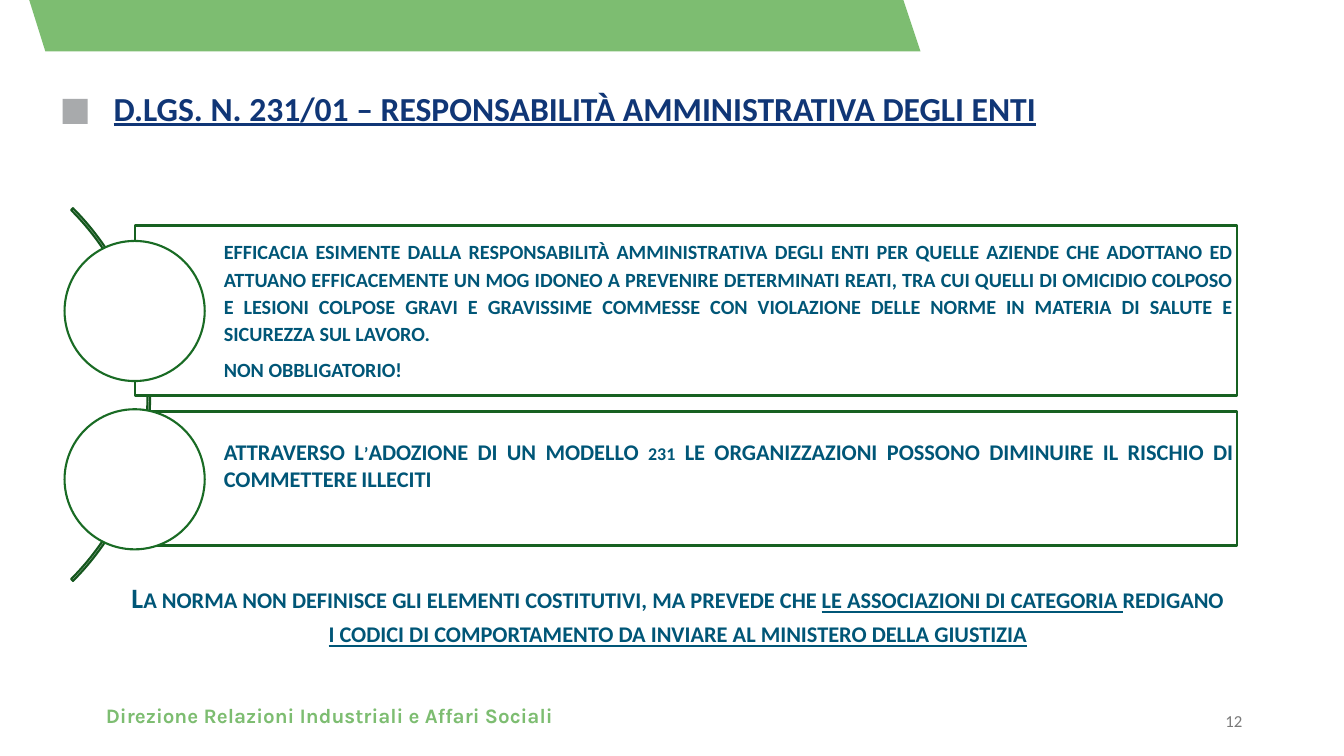
import pptx
import pptx.dml.color
import pptx.enum.shapes
import pptx.enum.text
import pptx.oxml.ns
import pptx.util
from lxml import etree
from pptx.util import Inches

SHAPE = pptx.enum.shapes.MSO_SHAPE
ALIGN = pptx.enum.text.PP_ALIGN
ANCHOR = pptx.enum.text.MSO_ANCHOR

TEAL = "005677"
NAVY = "103676"
LIGHT_GREEN = "7DBD71"
FRAME_GREEN = "176121"
CIRCLE_GREEN = "196B24"
ARC_GREEN = "14561D"
WHITE = "FFFFFF"

EXEMPTION = (
    "efficacia esimente dalla responsabilità amministrativa degli enti per quelle "
    "aziende che adottano ed attuano efficacemente un mog idoneo a prevenire "
    "determinati reati, tra cui quelli di omicidio colposo e lesioni colpose gravi e "
    "gravissime commesse con violazione delle norme in materia di salute e sicurezza "
    "sul lavoro. "
)
MODEL = (
    "ATTRAVERSO L’ADOZIONE DI UN MODELLO 231 LE ORGANIZZAZIONI POSSONO "
    "DIMINUIRE IL RISCHIO DI COMMETTERE ILLECITI"
)


def color(hex_value):
    return pptx.dml.color.RGBColor.from_string(hex_value)


def style_shape(shape, fill=None, line=None, width=1.5):
    shape.shadow.inherit = False
    if fill:
        shape.fill.solid()
        shape.fill.fore_color.rgb = color(fill)
    else:
        shape.fill.background()
    if line:
        shape.line.color.rgb = color(line)
        shape.line.width = pptx.util.Pt(width)
    else:
        shape.line.fill.background()


def add_shape(slide, kind, place, **style):
    shape = slide.shapes.add_shape(kind, *map(Inches, place))
    style_shape(shape, **style)
    return shape


def add_banner(slide):
    builder = slide.shapes.build_freeform(Inches(0.29), 0)
    corners = [(0.45, 0.51), (9.13, 0.51), (8.96, 0)]
    builder.add_line_segments([(Inches(x), Inches(y)) for x, y in corners])
    style_shape(builder.convert_to_shape(), fill=LIGHT_GREEN)


def add_title_marker(slide):
    marker = add_shape(slide, SHAPE.RECTANGLE, (0.62, 0.98, 0.25, 0.25), fill="939598")
    qn = pptx.oxml.ns.qn
    rgb = marker.fill._xPr.find(".//" + qn("a:srgbClr"))
    etree.SubElement(rgb, qn("a:alpha")).set("val", "80000")


def set_frame(box, insets=(0.1, 0.05, 0.1, 0.05), anchor=ANCHOR.TOP):
    """Set wrapping, anchor and the left, top, right and bottom insets."""
    frame = box.text_frame
    frame.word_wrap = True
    frame.vertical_anchor = anchor
    (frame.margin_left, frame.margin_top,
     frame.margin_right, frame.margin_bottom) = map(Inches, insets)
    return frame


def add_text_box(slide, place, **frame_style):
    return set_frame(slide.shapes.add_textbox(*map(Inches, place)), **frame_style)


def format_para(para, align=ALIGN.LEFT, line=1.0, before=0, after=0):
    para.alignment = align
    para.line_spacing = line
    para.space_before = pptx.util.Pt(before)
    para.space_after = pptx.util.Pt(after)


def add_span(para, text, size, hex_color, font="Calibri", bold=True,
             underline=False, small_caps=False):
    span = para.add_run()
    span.text = text
    span.font.size = pptx.util.Pt(size)
    span.font.name = font
    span.font.bold = bold
    span.font.underline = underline
    span.font.color.rgb = color(hex_color)
    if small_caps:
        span.font._element.set("cap", "small")


def add_statement(slide, place, circle_top, texts, size, insets, line, after):
    """Draw a framed statement with a circle over its left edge."""
    panel = add_shape(slide, SHAPE.RECTANGLE, place,
                      fill=WHITE, line=FRAME_GREEN, width=2)
    frame = set_frame(panel, insets, ANCHOR.MIDDLE)
    for index, text in enumerate(texts):
        para = frame.add_paragraph() if index else frame.paragraphs[0]
        format_para(para, ALIGN.JUSTIFY, line, after=after)
        add_span(para, text, size, TEAL, small_caps=True)
    add_shape(slide, SHAPE.OVAL, (0.64, circle_top, 1.39, 1.39),
              fill=WHITE, line=CIRCLE_GREEN)


def add_arc(slide):
    arc = add_shape(slide, SHAPE.BLOCK_ARC, (-3.74, 1.3, 5.23, 5.23), line=ARC_GREEN)
    for index, value in enumerate((189, 27, 0.005)):
        arc.adjustments[index] = value


def add_title(slide):
    para = add_text_box(slide, (1.03, 0.86, 11.27, 0.47),
                        anchor=ANCHOR.MIDDLE).paragraphs[0]
    format_para(para, line=0.9)
    add_span(para, "D.LGS. N. 231/01 – RESPONSABILITÀ AMMINISTRATIVA DEGLI ENTI",
             24, NAVY, underline=True)


def add_conclusion(slide):
    para = add_text_box(slide, (1.16, 5.71, 11.12, 0.77)).paragraphs[0]
    format_para(para, ALIGN.CENTER, before=1.3)
    spans = [
        ("La norma non definisce gli elementi costitutivi, ma prevede che ", False),
        ("le associazioni di categoria ", True),
        ("redigano ", False),
        ("i codici di comportamento da inviare al ministero della giustizia", True),
    ]
    for text, underline in spans:
        add_span(para, text, 20, TEAL, underline=underline, small_caps=True)


def add_footer(slide):
    para = add_text_box(slide, (1.03, 6.71, 5.87, 0.5),
                        insets=(0.02, 0.28, 0, 0)).paragraphs[0]
    format_para(para)
    add_span(para, "Direzione Relazioni Industriali e Affari Sociali",
             14.7, LIGHT_GREEN, font="Karla")
    number = add_text_box(slide, (9.42, 6.95, 3, 0.4),
                          anchor=ANCHOR.MIDDLE).paragraphs[0]
    format_para(number, ALIGN.RIGHT)
    add_span(number, "12", 12, "797979", bold=False)


def main():
    deck = pptx.Presentation()
    deck.slide_width = Inches(13.33)
    deck.slide_height = Inches(7.5)
    page = deck.slides.add_slide(deck.slide_layouts[6])

    add_banner(page)
    add_title_marker(page)
    add_title(page)
    add_arc(page)
    add_statement(page, (1.34, 2.24, 10.93, 1.68), 2.39,
                  [EXEMPTION, "non obbligatorio!"], 18,
                  insets=(0.88, 0.05, 0.05, 0.05), line=0.9, after=6.3)
    add_statement(page, (1.34, 4.08, 10.93, 1.33), 4.06, [MODEL], 16,
                  insets=(0.88, 0.04, 0.04, 0.3), line=1.0, after=0)
    add_conclusion(page)
    add_footer(page)
    deck.save("out.pptx")


if __name__ == "__main__":
    main()
